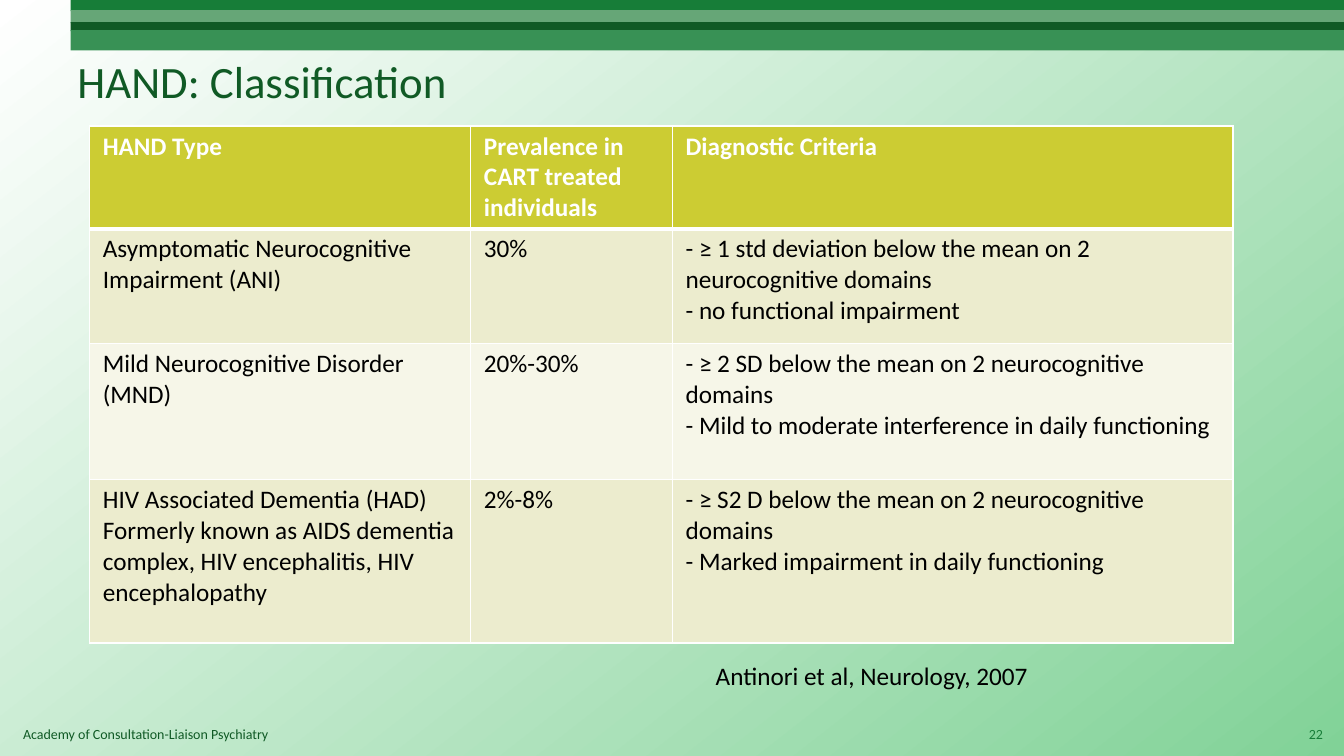
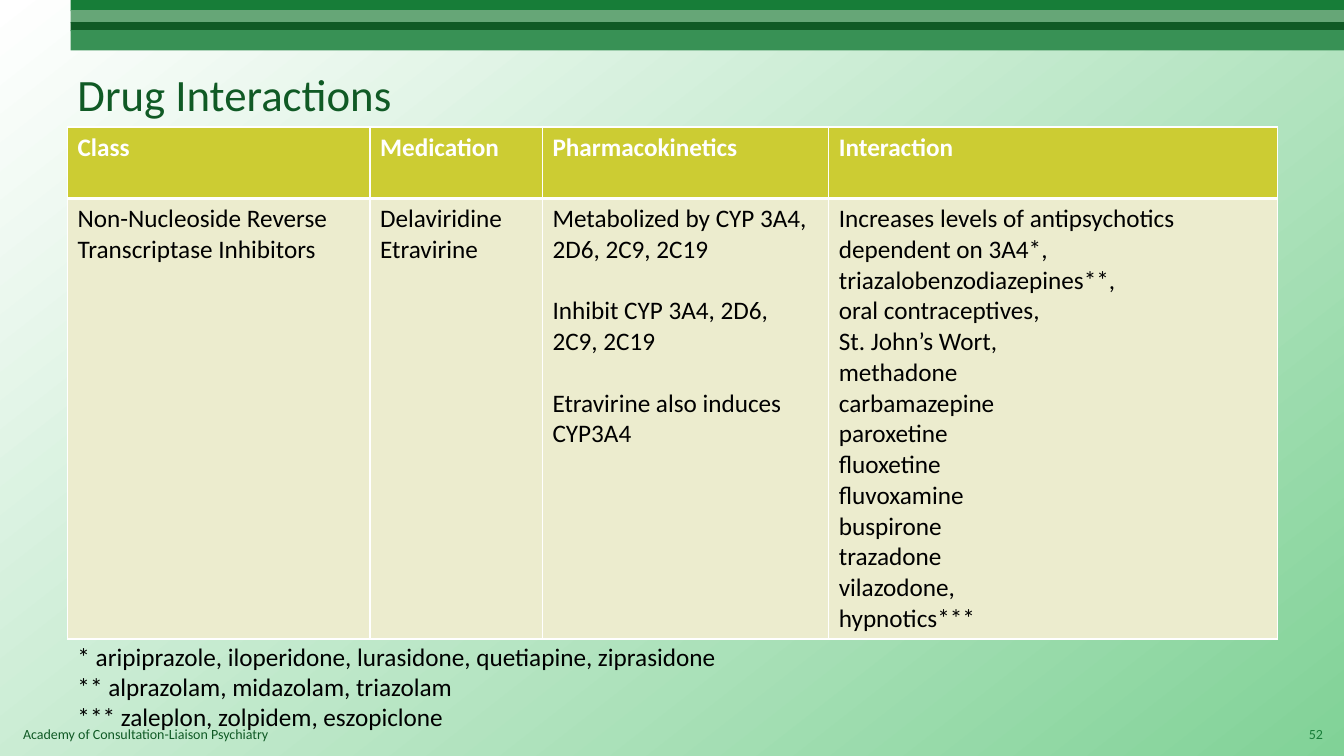
from lxml.etree import SubElement
from pptx import Presentation
from pptx.dml.color import RGBColor
from pptx.enum.shapes import MSO_SHAPE as Preset
from pptx.enum.text import MSO_ANCHOR as Anchor, PP_ALIGN as Align
from pptx.oxml.ns import qn
from pptx.util import Inches, Pt

COLORS = {
    "white": "FFFFFF", "black": "000000", "mint": "81D297",
    "green": "177D38", "sage": "66A677", "forest": "105A25", "leaf": "389155",
    "header": "CCCC33", "odd_row": "ECECCE", "even_row": "F6F6E8",
}
FONT = "Calibri"
SLIDE_W, SLIDE_H = 13.33, 7.5
BAND_LEFT = 0.7
BANDS = [(0, 0.11, "green"), (0.1, 0.13, "sage"),
         (0.22, 0.09, "forest"), (0.3, 0.2, "leaf")]
BLANK_LINE = 22

HAND_ROWS = [
    [["HAND Type"], ["Prevalence in CART treated individuals"],
     ["Diagnostic Criteria"]],
    [["Asymptomatic Neurocognitive Impairment (ANI)"], ["30%"],
     ["- ≥ 1 std deviation below the mean on 2 neurocognitive domains",
      "- no functional impairment"]],
    [["Mild Neurocognitive Disorder (MND)"], ["20%-30%"],
     ["- ≥ 2 SD below the mean on 2 neurocognitive domains",
      "- Mild to moderate interference in daily functioning"]],
    [["HIV Associated Dementia (HAD)",
      "Formerly known as AIDS dementia complex, HIV encephalitis, "
      "HIV encephalopathy"], ["2%-8%"],
     ["- ≥ S2 D below the mean on 2 neurocognitive domains",
      "- Marked impairment in daily functioning"]],
]
DRUG_ROWS = [
    [["Class"], ["Medication"], ["Pharmacokinetics"], ["Interaction"]],
    [["Non-Nucleoside Reverse Transcriptase Inhibitors"],
     ["Delaviridine", "Etravirine"],
     ["Metabolized by CYP 3A4, 2D6, 2C9, 2C19",
      "Inhibit CYP 3A4, 2D6, 2C9, 2C19",
      "Etravirine also induces CYP3A4"],
     ["Increases levels of antipsychotics dependent on 3A4*, "
      "triazalobenzodiazepines**,",
      "oral contraceptives,", "St. John’s Wort,", "methadone",
      "carbamazepine", "paroxetine", "fluoxetine", "fluvoxamine",
      "buspirone", "trazadone", "vilazodone,", "hypnotics***"]],
]
DRUG_NOTES = [
    "* aripiprazole, iloperidone, lurasidone, quetiapine, ziprasidone",
    "** alprazolam, midazolam, triazolam",
    "*** zaleplon, zolpidem, eszopiclone",
]


def rgb(color):
    """Return the palette colour of the given name."""
    return RGBColor.from_string(COLORS[color])


def write(frame, lines, size, color, bold=False, align=Align.LEFT, gap=0):
    """Fill a text frame with one formatted paragraph per line."""
    frame.text = "\n".join(lines)
    for index, paragraph in enumerate(frame.paragraphs):
        paragraph.alignment = align
        if index and gap:
            paragraph.space_before = Pt(gap)
        for run in paragraph.runs:
            run.font.name, run.font.size, run.font.bold = FONT, Pt(size), bold
            run.font.color.rgb = rgb(color)


def add_text(slide, box, lines, size, color, anchor=Anchor.TOP,
             align=Align.LEFT, wrap=True):
    """Place a text box at (left, top, width, height) in inches."""
    frame = slide.shapes.add_textbox(*map(Inches, box)).text_frame
    frame.word_wrap = wrap
    frame.vertical_anchor = anchor
    write(frame, lines, size, color, align=align)


def add_frame(prs, title, title_top, number):
    """Add a slide with the shared background, bands, title and footer."""
    slide = prs.slides.add_slide(prs.slide_layouts[6])
    backdrop = slide.background.fill
    backdrop.gradient()
    backdrop.gradient_angle = 360 - 52
    for stop, color in zip(backdrop.gradient_stops, ("white", "mint")):
        stop.color.rgb = rgb(color)
    for top, height, color in BANDS:
        band = slide.shapes.add_shape(
            Preset.RECTANGLE, Inches(BAND_LEFT), Inches(top),
            Inches(SLIDE_W - BAND_LEFT), Inches(height))
        band.shadow.inherit = False
        band.fill.solid()
        band.fill.fore_color.rgb = rgb(color)
        band.line.fill.background()
    add_text(slide, (0.13, 7.15, 9.25, 0.27),
             ["Academy of Consultation-Liaison Psychiatry"], 10, "forest")
    add_text(slide, (0.67, title_top, 12, 1.25), [title], 32, "forest",
             anchor=Anchor.MIDDLE)
    add_text(slide, (12.69, 7.08, 0.53, 0.4), [number], 10, "green",
             anchor=Anchor.MIDDLE, align=Align.RIGHT)
    return slide


def add_borders(cell, top, bottom):
    """Draw white cell borders; top and bottom are widths in points."""
    properties = cell._tc.get_or_add_tcPr()
    for side, width in (("L", 1), ("R", 1), ("T", top), ("B", bottom)):
        border = SubElement(properties, qn(f"a:ln{side}"), w=str(Pt(width)))
        fill = SubElement(border, qn("a:solidFill"))
        SubElement(fill, qn("a:srgbClr"), val=COLORS["white"])


def add_grid(slide, left, top, widths, heights, rows, inset=0.1, gaps=()):
    """Place a table; gaps gives paragraph spacing by (row, column)."""
    gaps = dict(gaps)
    grid = slide.shapes.add_table(
        len(rows), len(widths), Inches(left), Inches(top),
        Inches(sum(widths)), Inches(sum(heights))).table
    grid.horz_banding = False
    for column, width in zip(grid.columns, widths):
        column.width = Inches(width)
    for r, (row, height) in enumerate(zip(rows, heights)):
        grid.rows[r].height = Inches(height)
        is_header = r == 0
        shade = "header" if is_header else "odd_row" if r % 2 else "even_row"
        for c, lines in enumerate(row):
            cell = grid.cell(r, c)
            cell.margin_left = cell.margin_right = Inches(inset)
            add_borders(cell, 3 if r == 1 else 1, 3 if is_header else 1)
            cell.fill.solid()
            cell.fill.fore_color.rgb = rgb(shade)
            write(cell.text_frame, lines, 18,
                  "white" if is_header else "black", bold=is_header,
                  gap=gaps.get((r, c), 0))


def classification_slide(prs):
    """Build the table of HAND types with its citation."""
    slide = add_frame(prs, "HAND: Classification", 0.17, "22")
    add_grid(slide, 0.89, 1.25, (3.78, 2, 5.56), (1.02, 1.14, 1.35, 1.62),
             HAND_ROWS, inset=0.13)
    add_text(slide, (7, 6.5, 3.41, 0.4), ["Antinori et al, Neurology, 2007"],
             18, "black", wrap=False)


def interactions_slide(prs):
    """Build the table of drug interactions with its footnotes."""
    slide = add_frame(prs, "Drug Interactions", 0.3, "52")
    add_grid(slide, 0.67, 1.26, (3, 1.71, 2.84, 4.45), (0.71, 4.37),
             DRUG_ROWS, gaps={(1, 2): BLANK_LINE})
    add_text(slide, (0.67, 6.31, 6.62, 1.01), DRUG_NOTES, 18, "black",
             wrap=False)


def main():
    """Build and save the presentation."""
    prs = Presentation()
    prs.slide_width, prs.slide_height = Inches(SLIDE_W), Inches(SLIDE_H)
    classification_slide(prs)
    interactions_slide(prs)
    prs.save("out.pptx")


if __name__ == "__main__":
    main()
